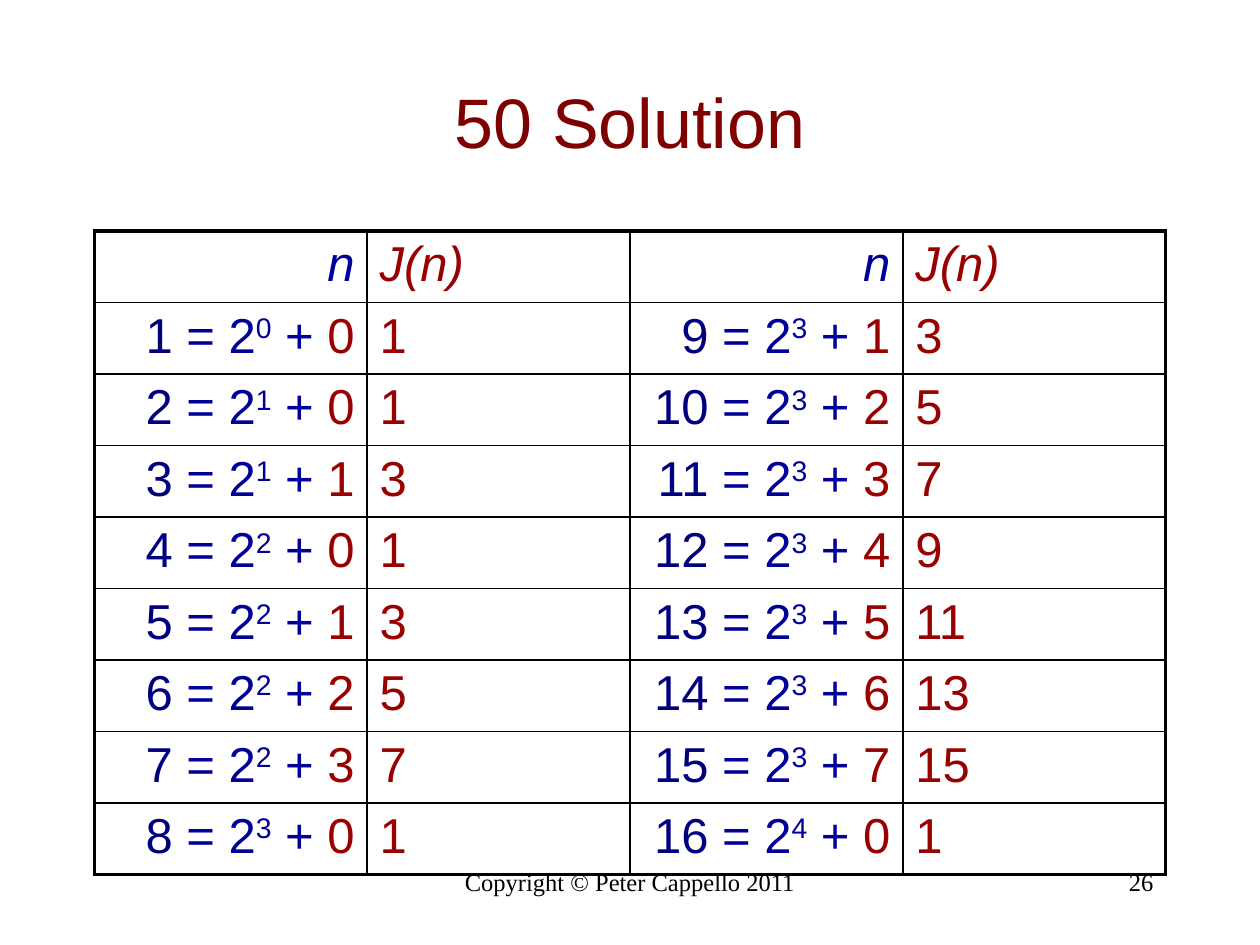
"""Build a slide that tabulates the Josephus numbers J(1) to J(16)."""
from dataclasses import dataclass

from lxml.etree import SubElement
from pptx import Presentation
from pptx.dml.color import RGBColor
from pptx.enum.text import MSO_ANCHOR, PP_ALIGN
from pptx.oxml import parse_xml
from pptx.oxml.ns import nsdecls, qn
from pptx.util import Cm, Pt


@dataclass(frozen=True)
class Theme:
    black: str = "000000"
    title: str = "7F0000"
    number: str = "00007F"
    power: str = "000099"
    result: str = "990000"
    sans: str = "Arial"
    serif: str = "Times New Roman"
    title_size: int = 40
    cell_size: int = 28
    footer_size: int = 14
    outer_line: float = 2.25
    inner_line: float = 1


class SlideBuilder:
    def __init__(self, slide, theme):
        self.s = slide
        self.theme = theme

    def style(self, p, font, size, color, align):
        p.alignment = align
        p.font.name = font
        p.font.size = Pt(size)
        p.font.color.rgb = RGBColor.from_string(color)

    def text(self, box, text, font, size, color, align, anchor=MSO_ANCHOR.TOP):
        tf = self.s.shapes.add_textbox(*map(Cm, box)).text_frame
        tf.word_wrap = True
        tf.vertical_anchor = anchor
        p = tf.paragraphs[0]
        p.text = text
        self.style(p, font, size, color, align)

    def borders(self, cell, left, right, top, bottom):
        tc_pr = cell._tc.get_or_add_tcPr()
        edges = {"L": left, "R": right, "T": top, "B": bottom}
        for i, (side, outer) in enumerate(edges.items()):
            width = self.theme.outer_line if outer else self.theme.inner_line
            ln = parse_xml(f'<a:ln{side} {nsdecls("a")} w="{Pt(width)}"/>')
            fill = SubElement(ln, qn("a:solidFill"))
            SubElement(fill, qn("a:srgbClr"), val=self.theme.black)
            tc_pr.insert(i, ln)

    def cell(self, cell, parts, align, italic):
        p = cell.text_frame.paragraphs[0]
        self.style(p, self.theme.sans, self.theme.cell_size, parts[0][1], align)
        p.font.italic = italic
        for text, color, raised in parts:
            r = p.add_run()
            r.text = text
            r.font.color.rgb = RGBColor.from_string(color)
            if raised:
                r.font._element.set("baseline", "30000")

    def table(self, left, top, widths, row_height, rows):
        n_rows, n_cols = len(rows), len(widths)
        size = Cm(sum(widths)), Cm(row_height * n_rows)
        table = self.s.shapes.add_table(n_rows, n_cols, Cm(left), Cm(top), *size).table
        table.first_row = table.horz_banding = False
        for col, width in zip(table.columns, widths):
            col.width = Cm(width)
        for i, row in enumerate(rows):
            table.rows[i].height = Cm(row_height)
            for j, parts in enumerate(row):
                cell = table.cell(i, j)
                cell.fill.background()
                align = PP_ALIGN.LEFT if j % 2 else PP_ALIGN.RIGHT
                self.cell(cell, parts, align, italic=i == 0)
                self.borders(cell, j == 0, j == n_cols - 1, i == 0, i == n_rows - 1)


def josephus_cells(n, theme):
    power = n.bit_length() - 1
    rest = n - 2 ** power
    decomposition = [
        (f"{n} ", theme.number, False),
        ("= 2", theme.power, False),
        (str(power), theme.power, True),
        (" +", theme.power, False),
        (f" {rest}", theme.result, False),
    ]
    return [decomposition, [(str(2 * rest + 1), theme.result, False)]]


def main():
    theme = Theme()
    prs = Presentation()
    prs.slide_width, prs.slide_height = Cm(25.4), Cm(19.05)
    builder = SlideBuilder(prs.slides.add_slide(prs.slide_layouts[6]), theme)

    footer = theme.serif, theme.footer_size, theme.black
    builder.text((8.68, 17.36, 8.04, 1.27), "Copyright © Peter Cappello 2011",
                 *footer, PP_ALIGN.CENTER)
    builder.text((18.2, 17.36, 5.3, 1.27), "26", *footer, PP_ALIGN.RIGHT)
    builder.text((1.9, 0.85, 21.6, 3.17), "50 Solution", theme.sans,
                 theme.title_size, theme.title, PP_ALIGN.CENTER, MSO_ANCHOR.MIDDLE)

    header = [[("n", theme.power, False)], [("J(n)", theme.result, False)]]
    rows = [header * 2]
    rows += [josephus_cells(n, theme) + josephus_cells(n + 8, theme)
             for n in range(1, 9)]
    builder.table(1.9, 4.66, [5.5, 5.3] * 2, 1.44, rows)
    prs.save("out.pptx")


if __name__ == "__main__":
    main()
